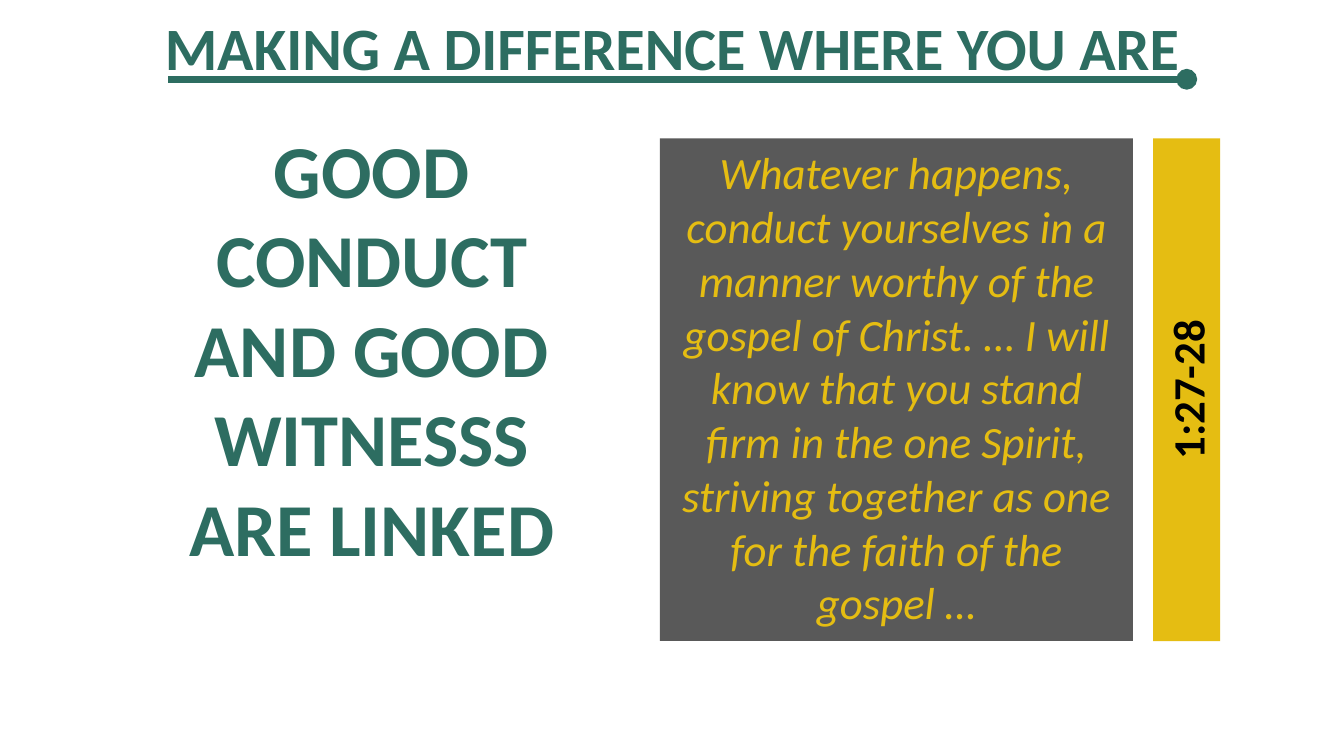
import pptx
import pptx.util
import pptx.dml.color
import pptx.enum.shapes
import pptx.enum.text
import pptx.oxml.ns
import lxml.etree
from dataclasses import dataclass

Inches = pptx.util.Inches
Pt = pptx.util.Pt


@dataclass(frozen=True)
class Theme:
    green: str = "2D6D61"
    gold: str = "E5BD12"
    gray: str = "595959"
    black: str = "000000"
    font: str = "Calibri"
    head: float = 32.2
    claim: float = 40
    verse: float = 24
    rule: float = 3.75


THEME = Theme()


def color(code):
    return pptx.dml.color.RGBColor.from_string(code)


def write(shape, text, size, ink, bold=False, italic=False, middle=False):
    """Fill a shape with one centred, wrapped paragraph."""
    frame = shape.text_frame
    frame.word_wrap = True
    frame.auto_size = pptx.enum.text.MSO_AUTO_SIZE.NONE
    anchor = pptx.enum.text.MSO_ANCHOR
    frame.vertical_anchor = anchor.MIDDLE if middle else anchor.TOP
    para = frame.paragraphs[0]
    para.text = text
    para.alignment = pptx.enum.text.PP_ALIGN.CENTER
    font = para.font
    font.name, font.size = THEME.font, Pt(size)
    font.bold, font.italic = bold, italic
    font.color.rgb = color(ink)
    return para


def block(slide, box, fill):
    """Add a plain filled rectangle."""
    kind = pptx.enum.shapes.MSO_SHAPE.RECTANGLE
    shape = slide.shapes.add_shape(kind, *map(Inches, box))
    shape.shadow.inherit = False
    shape.fill.solid()
    shape.fill.fore_color.rgb = color(fill)
    shape.line.fill.background()
    return shape


def header(slide, box, text):
    """Title with a round-ended rule beneath it."""
    left, top, width, height = box
    title = slide.shapes.title
    title.left, title.top, title.width, title.height = map(Inches, box)
    para = write(title, text, THEME.head, THEME.green, bold=True, middle=True)
    para.line_spacing = 0.9

    level = Inches(top + height - 0.15)
    rule = slide.shapes.add_connector(
        pptx.enum.shapes.MSO_CONNECTOR.STRAIGHT,
        Inches(left + 1.25), level, Inches(left + width - 1.17), level)
    rule.line.color.rgb = color(THEME.green)
    rule.line.width = Pt(THEME.rule)
    qn = pptx.oxml.ns.qn
    lxml.etree.SubElement(rule.line._get_or_add_ln(), qn("a:tailEnd"), type="oval")
    lxml.etree.SubElement(rule._element.spPr, qn("a:effectLst"))


def claim(slide, box, text):
    """Large statement on the left."""
    shape = slide.shapes.add_textbox(*map(Inches, box))
    write(shape, text, THEME.claim, THEME.green, bold=True)


def verse(slide, box, text, cite):
    """Quotation panel with its reference on a bar read upwards."""
    left, top, width, height = box
    bar, gap = 0.5, 0.15
    panel = block(slide, (left, top, width - bar - gap, height), THEME.gray)
    write(panel, text, THEME.verse, THEME.gold, italic=True)

    # The bar is laid flat around its centre, then turned
    mid_x, mid_y = left + width - bar / 2, top + height / 2
    flat = (mid_x - height / 2, mid_y - bar / 2, height, bar)
    side = block(slide, flat, THEME.gold)
    side.rotation = 270
    write(side, cite, THEME.verse, THEME.black, bold=True)


def main():
    deck = pptx.Presentation()
    # Widescreen, 16 by 9
    deck.slide_width = Inches(10)
    deck.slide_height = deck.slide_width * 9 // 16
    slide = deck.slides.add_slide(deck.slide_layouts[5])
    header(slide, (0, 0.02, 10, 0.72), "MAKING A DIFFERENCE WHERE YOU ARE")
    verse(slide, (4.91, 1.03, 4.17, 3.74),
          "Whatever happens, conduct yourselves in a manner worthy of the "
          "gospel of Christ. … I will know that you stand firm in the one "
          "Spirit, striving together as one for the faith of the gospel …",
          "1:27-28")
    claim(slide, (1.09, 0.87, 3.35, 3.87),
          "GOOD CONDUCT AND GOOD WITNESSS ARE LINKED")
    deck.save("out.pptx")


if __name__ == "__main__":
    main()
